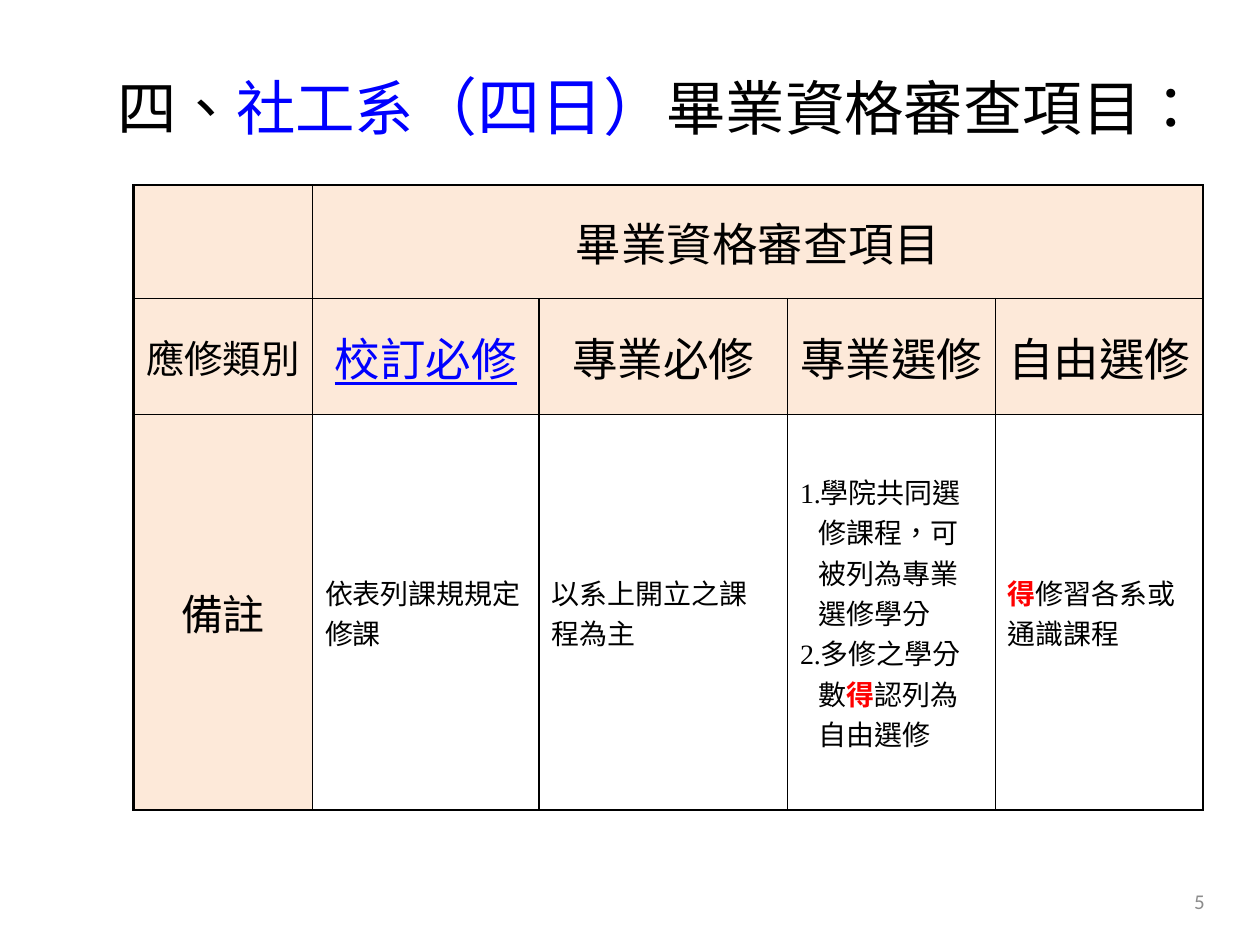
from lxml.etree import SubElement
from pptx import Presentation
from pptx.dml.color import RGBColor
from pptx.enum.lang import MSO_LANGUAGE_ID
from pptx.enum.text import MSO_ANCHOR, PP_ALIGN
from pptx.oxml.ns import qn
from pptx.util import Inches, Pt

COLORS = {"black": "000000", "blue": "0000FF", "red": "FF0000",
          "peach": "FDE9D9", "gray": "8C8C8C"}


def write(para, spans, size, font_name, align=PP_ALIGN.LEFT):
    """Fill a paragraph with (text, color) spans and return its runs."""
    para.alignment = align
    para.font.size = Pt(size)
    para.font.name = font_name
    runs = []
    for text, color in spans:
        span = para.add_run()
        span.text = text
        span.font.language_id = MSO_LANGUAGE_ID.TRADITIONAL_CHINESE
        span.font.color.rgb = RGBColor.from_string(COLORS[color])
        span.font.bold = color == "red"
        runs.append(span)
    return runs


def set_borders(cell, widths):
    """Draw black cell borders; widths maps L, R, T, B to points."""
    properties = cell._tc.get_or_add_tcPr()
    for side, width in widths.items():
        line = SubElement(properties, qn(f"a:ln{side}"), w=str(Pt(width)))
        fill = SubElement(line, qn("a:solidFill"))
        SubElement(fill, qn("a:srgbClr"), val=COLORS["black"])


deck = Presentation()
deck.slide_width, deck.slide_height = Inches(10), Inches(7.5)
slide = deck.slides.add_slide(deck.slide_layouts[5])

# Title
title = slide.shapes.title
title.left, title.top = Inches(0.83), Inches(0.29)
title.width, title.height = Inches(8.83), Inches(1.09)
title.text_frame.vertical_anchor = MSO_ANCHOR.MIDDLE
title_spans = [("四、", "black"), ("社工系", "blue"), ("（四日）", "blue"),
               ("畢業資格審查項目：", "black")]
title_runs = write(title.text_frame.paragraphs[0], title_spans, 34, "Noto Sans CJK JP")
title_runs[2].font.size = Pt(36)

# Requirements table: each cell is a list of paragraphs, each a list of spans
HEADERS = ["校訂必修", "專業必修", "專業選修", "自由選修"]
rows = [
    [[], [[("畢業資格審查項目", "black")]], [], [], []],
    [[[("應修類別", "black")]]]
    + [[[(name, "blue" if name == "校訂必修" else "black")]] for name in HEADERS],
    [
        [[("備註", "black")]],
        [[("依表列課規規定修課", "black")]],
        [[("以系上開立之課程為主", "black")]],
        [[("1.學院共同選修課程，可被列為專業選修學分", "black")],
         [("2.多修之學分數", "black"), ("得", "red"), ("認列為自由選修", "black")]],
        [[("得", "red"), ("修習各系或通識課程", "black")]],
    ],
]
label_sizes = [26, 22, 24]
body_sizes = [26, 26, 16]
column_widths = [1.42, 1.8, 1.97, 1.65, 1.65]
row_heights = [0.9, 0.92, 3.14]

table = slide.shapes.add_table(3, 5, Inches(1.06), Inches(1.47),
                               Inches(8.5), Inches(4.96)).table
table.first_row = table.horz_banding = False
for column, width in zip(table.columns, column_widths):
    column.width = Inches(width)
for row, height in zip(table.rows, row_heights):
    row.height = Inches(height)
table.cell(0, 1).merge(table.cell(0, 4))

for r, row in enumerate(rows):
    for c, paragraphs in enumerate(row):
        cell = table.cell(r, c)
        is_header = r < 2 or c == 0
        set_borders(cell, {"L": 1.5 if c == 0 else 1, "R": 1.5 if c == 4 else 1,
                           "T": 1.5 if r == 0 else 1, "B": 1.5 if r == 2 else 1})
        if is_header:
            cell.fill.solid()
            cell.fill.fore_color.rgb = RGBColor.from_string(COLORS["peach"])
        else:
            cell.fill.background()
        cell.vertical_anchor = MSO_ANCHOR.MIDDLE
        size = label_sizes[r] if c == 0 else body_sizes[r]
        align = PP_ALIGN.CENTER if is_header else PP_ALIGN.LEFT
        for i, spans in enumerate(paragraphs):
            frame = cell.text_frame
            para = frame.paragraphs[0] if i == 0 else frame.add_paragraph()
            if len(paragraphs) > 1:
                hanging = para._p.get_or_add_pPr()
                hanging.set("marL", str(Inches(0.15)))
                hanging.set("indent", str(Inches(-0.15)))
            for span in write(para, spans, size, "Times New Roman", align):
                if spans[0][1] == "blue":
                    span.font.underline = True

# Slide number
number_box = slide.shapes.add_textbox(Inches(7.33), Inches(6.95), Inches(2.33), Inches(0.4))
number_box.text_frame.word_wrap = True
number_box.text_frame.vertical_anchor = MSO_ANCHOR.MIDDLE
write(number_box.text_frame.paragraphs[0], [("5", "gray")], 12, "Calibri", PP_ALIGN.RIGHT)

deck.save("out.pptx")
